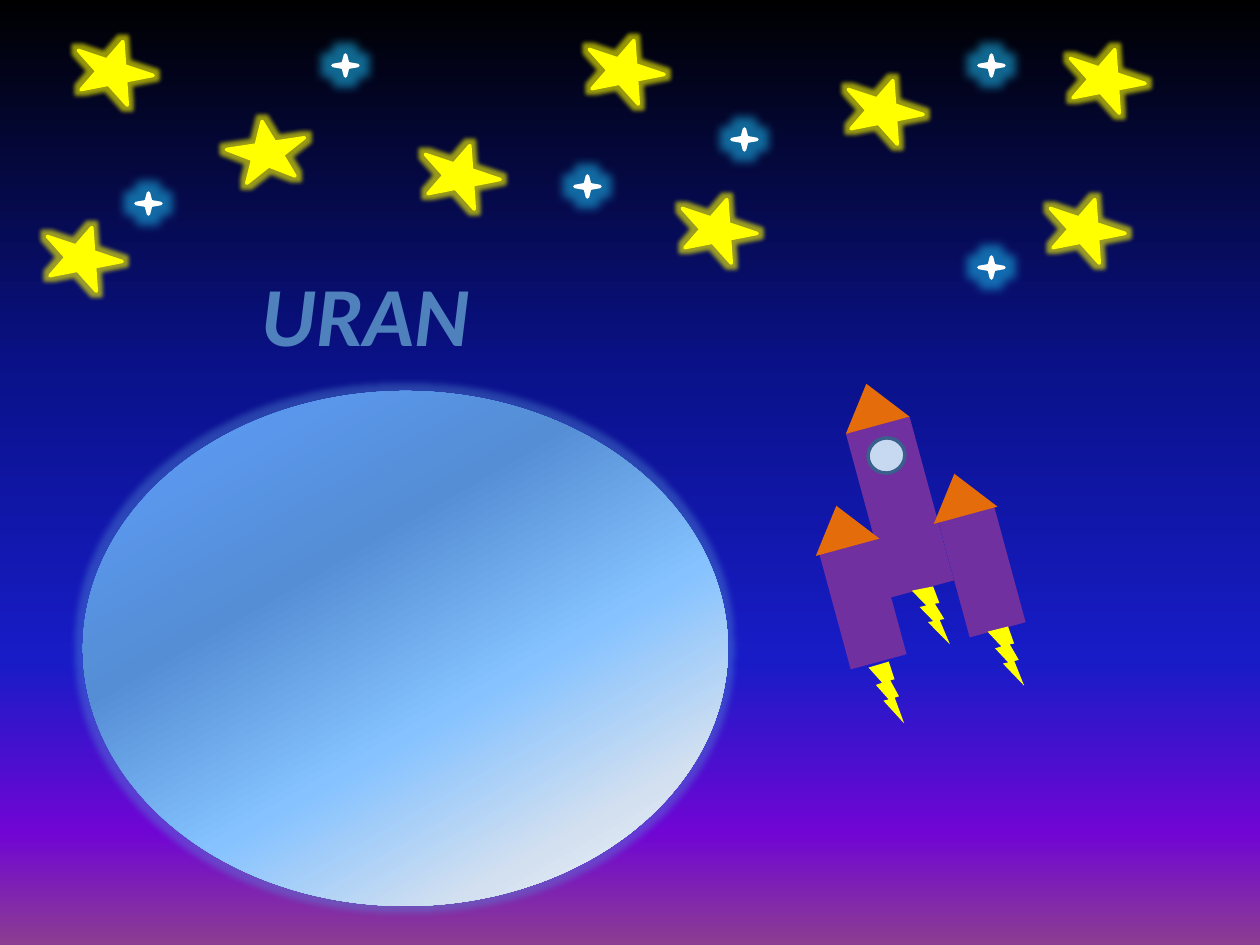
from lxml import etree
from pptx import Presentation
from pptx.dml.color import RGBColor
from pptx.enum.shapes import MSO_SHAPE
from pptx.enum.text import MSO_AUTO_SIZE, PP_ALIGN
from pptx.oxml.ns import qn
from pptx.util import Emu, Pt

OVAL = MSO_SHAPE.OVAL
RECTANGLE = MSO_SHAPE.RECTANGLE
TRIANGLE = MSO_SHAPE.ISOSCELES_TRIANGLE
BOLT = MSO_SHAPE.LIGHTNING_BOLT
STAR = MSO_SHAPE.STAR_5_POINT
SPARK = MSO_SHAPE.STAR_4_POINT
CENTER = PP_ALIGN.CENTER
GROW = MSO_AUTO_SIZE.SHAPE_TO_FIT_TEXT

PX_PER_INCH = 126
YELLOW, WHITE, PURPLE, ORANGE = "FFFF00", "FFFFFF", "7030A0", "E46C0A"
SKY_STOPS = [(0, "000000"), (40, "0A128C"), (70, "181CC7"),
             (88, "7005D4"), (100, "8C3D91")]
PLANET_STOPS = [(0, "5E9EFF"), (35, "558ED5"), (60, "85C2FF"),
                (82, "D3E0F0"), (100, "FFFFFF")]


def px(length):
    return Emu(round(length * 914400 / PX_PER_INCH))


def color(hex_text):
    return RGBColor.from_string(hex_text)


def add_gradient(fill, element, stops, angle):
    """Give the fill, held in element, its stops; angle runs clockwise."""
    fill.gradient()
    fill.gradient_angle = 360 - angle
    stop_list = element.find(".//" + qn("a:gsLst"))
    for stop in list(stop_list):
        stop_list.remove(stop)
    for percent, hex_text in stops:
        stop = etree.SubElement(stop_list, qn("a:gs"), pos=str(percent * 1000))
        etree.SubElement(stop, qn("a:srgbClr"), val=hex_text)


def add_glow(shape, hex_text, radius, opacity):
    """Add a glow with its radius in points and its opacity in percent."""
    effects = shape._element.spPr.find(qn("a:effectLst"))
    glow = etree.SubElement(effects, qn("a:glow"), rad=str(Pt(radius)))
    tint = etree.SubElement(glow, qn("a:srgbClr"), val=hex_text)
    etree.SubElement(tint, qn("a:alpha"), val=str(opacity * 1000))


def add_figure(parent, kind, box, fill=None, line=None, rotation=0):
    left, top, width, height = box
    shape = parent.shapes.add_shape(kind, px(left), px(top), px(width), px(height))
    shape.shadow.inherit = False
    shape.rotation = rotation
    if fill:
        shape.fill.solid()
        shape.fill.fore_color.rgb = color(fill)
    if line:
        shape.line.color.rgb = color(line)
        shape.line.width = Pt(2)
    else:
        shape.line.fill.background()
    return shape


def add_text(page, text, box, *, font, size, fill, bold=False, italic=False,
             align=CENTER):
    left, top, width, height = box
    frame = page.shapes.add_textbox(px(left), px(top), px(width), px(height)).text_frame
    frame.word_wrap = True
    frame.auto_size = GROW
    para = frame.paragraphs[0]
    para.alignment = align
    span = para.add_run()
    span.text = text
    span.font.name = font
    span.font.size = Pt(size)
    span.font.bold = bold
    span.font.italic = italic
    span.font.color.rgb = color(fill)


def add_planet(page, box):
    planet = add_figure(page, OVAL, box)
    add_gradient(planet.fill, planet._element, PLANET_STOPS, 60)
    add_glow(planet, "558ED5", 8, 40)


def add_stars(page, left, top):
    group = page.shapes.add_group_shape()
    tilt = 18.5
    stars = [(227, 121, 351.4), (844, 79, tilt), (585, 39, tilt),
             (1066, 48, tilt), (43, 226, tilt), (1046, 198, tilt),
             (421, 144, tilt), (74, 40, tilt), (678, 198, tilt)]
    for x, y, rotation in stars:
        star = add_figure(group, STAR, (left + x, top + y, 79, 59),
                          YELLOW, YELLOW, rotation)
        add_glow(star, YELLOW, 5, 60)
    sparks = [(732, 129), (136, 193), (979, 55), (333, 55), (979, 257), (575, 176)]
    for x, y in sparks:
        spark = add_figure(group, SPARK, (left + x, top + y, 25, 21), WHITE, WHITE)
        add_glow(spark, "1CADE4", 11, 60)


def add_rocket(page, left, top):
    group = page.shapes.add_group_shape()
    lean = 344.8
    parts = [
        (RECTANGLE, (25, 161, 58, 120), PURPLE, None, lean),
        (RECTANGLE, (58, 39, 66, 170), PURPLE, None, lean),
        (RECTANGLE, (144, 129, 58, 120), PURPLE, None, lean),
        (TRIANGLE, (0, 122, 66, 43), ORANGE, None, lean),
        (TRIANGLE, (118, 90, 66, 43), ORANGE, None, lean),
        (TRIANGLE, (30, 0, 66, 43), ORANGE, None, lean),
        (OVAL, (59, 55, 37, 35), "C6D9F1", "3A5F8C", lean),
        (BOLT, (55, 279, 47, 57), YELLOW, None, 12.6),
        (BOLT, (98, 204, 50, 52), YELLOW, None, 14.1),
        (BOLT, (174, 244, 48, 54), YELLOW, None, 13.2),
    ]
    for kind, (x, y, width, height), fill, line, rotation in parts:
        add_figure(group, kind, (left + x, top + y, width, height),
                   fill, line, rotation)


def main():
    deck = Presentation()
    deck.slide_width, deck.slide_height = px(1260), px(945)
    page = deck.slides.add_slide(deck.slide_layouts[6])
    add_gradient(page.background.fill, page._element, SKY_STOPS, 90)
    add_planet(page, (83, 391, 645, 515))
    add_stars(page, 0, 0)
    add_rocket(page, 809, 383)
    add_text(page, "URAN", (231, 256, 270, 115), font="Calibri", size=48,
             fill="4F81BD", bold=True, italic=True)
    deck.save("out.pptx")


if __name__ == "__main__":
    main()
